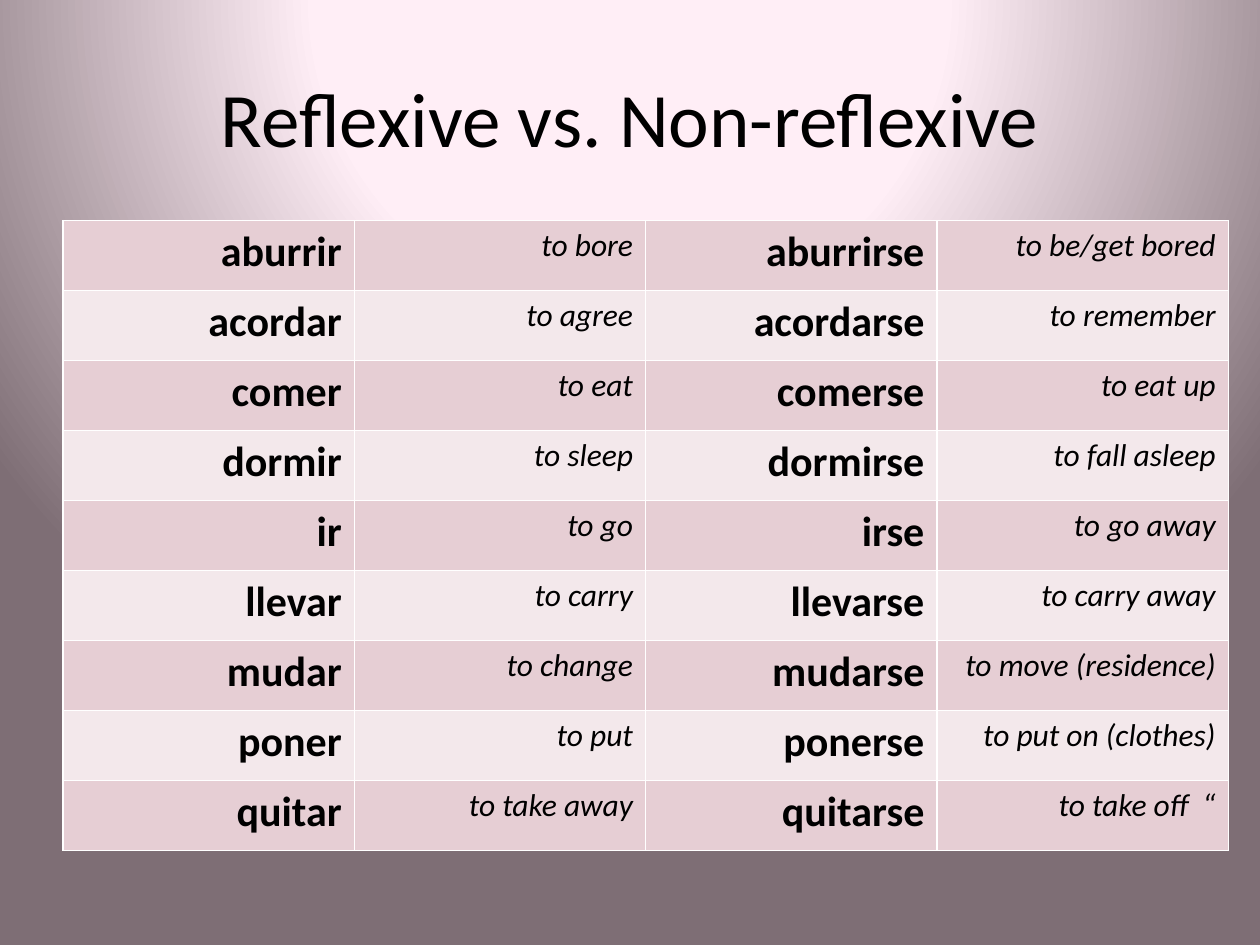
"""Build a slide with a table of reflexive and non-reflexive Spanish verbs."""
import pptx
import pptx.dml.color
import pptx.enum.text
import pptx.oxml
import pptx.oxml.ns
import pptx.util
from pptx.util import Inches


def color(hex_string):
    return pptx.dml.color.RGBColor.from_string(hex_string)


def write_text(frame, text, size, align, bold=False, italic=False):
    paragraph = frame.paragraphs[0]
    paragraph.alignment = align
    run = paragraph.add_run()
    run.text = text
    run.font.name = "Calibri"
    run.font.size = pptx.util.Pt(size)
    run.font.bold = bold
    run.font.italic = italic
    run.font.color.rgb = color("000000")


NAMESPACE = pptx.oxml.ns.nsdecls("a")
ALIGN = pptx.enum.text.PP_ALIGN
VERBS = [
    ("aburrir", "to bore", "aburrirse", "to be/get bored"),
    ("acordar", "to agree", "acordarse", "to remember"),
    ("comer", "to eat", "comerse", "to eat up"),
    ("dormir", "to sleep", "dormirse", "to fall asleep"),
    ("ir", "to go", "irse", "to go away"),
    ("llevar", "to carry", "llevarse", "to carry away"),
    ("mudar", "to change", "mudarse", "to move (residence)"),
    ("poner", "to put", "ponerse", "to put on (clothes)"),
    ("quitar", "to take away", "quitarse", "to take off  “"),
]
BAND_FILLS = ["E6CED4", "F3E8EB"]
BACKGROUND_STOPS = [(0, "FFF1F8"), (40, "FFEEF6"), (100, "7E6E75")]

presentation = pptx.Presentation()
presentation.slide_width = Inches(10)
presentation.slide_height = Inches(7.5)
slide = presentation.slides.add_slide(presentation.slide_layouts[5])

slide.background.fill.gradient()
old_gradient = next(slide.element.iter(pptx.oxml.ns.qn("a:gradFill")))
stops = "".join(
    f'<a:gs pos="{position * 1000}"><a:srgbClr val="{value}"/></a:gs>'
    for position, value in BACKGROUND_STOPS
)
gradient = pptx.oxml.parse_xml(
    f'<a:gradFill {NAMESPACE} rotWithShape="1"><a:gsLst>{stops}</a:gsLst>'
    '<a:path path="circle"><a:fillToRect l="50000" t="-80000" r="50000" b="180000"/>'
    "</a:path></a:gradFill>"
)
old_gradient.getparent().replace(old_gradient, gradient)

title = slide.shapes.title
title.left, title.top = Inches(0.5), Inches(0.3)
title.width, title.height = Inches(9), Inches(1.25)
title.text_frame.vertical_anchor = pptx.enum.text.MSO_ANCHOR.MIDDLE
write_text(title.text_frame, "Reflexive vs. Non-reflexive", 44, ALIGN.CENTER)

table = slide.shapes.add_table(
    len(VERBS), len(VERBS[0]), Inches(0.5), Inches(1.75), Inches(9.25), Inches(5)
).table
table.first_row = False
table.horz_banding = False

for row_index, words in enumerate(VERBS):
    for column_index, word in enumerate(words):
        cell = table.cell(row_index, column_index)
        is_verb = column_index % 2 == 0
        write_text(cell.text_frame, word, 24 if is_verb else 18, ALIGN.RIGHT,
                   bold=is_verb, italic=not is_verb)
        properties = cell._tc.get_or_add_tcPr()
        for side in "LRTB":
            properties.append(pptx.oxml.parse_xml(
                f'<a:ln{side} {NAMESPACE} w="12700"><a:solidFill>'
                f'<a:srgbClr val="FFFFFF"/></a:solidFill></a:ln{side}>'
            ))
        cell.fill.solid()
        cell.fill.fore_color.rgb = color(BAND_FILLS[row_index % 2])

presentation.save("out.pptx")
